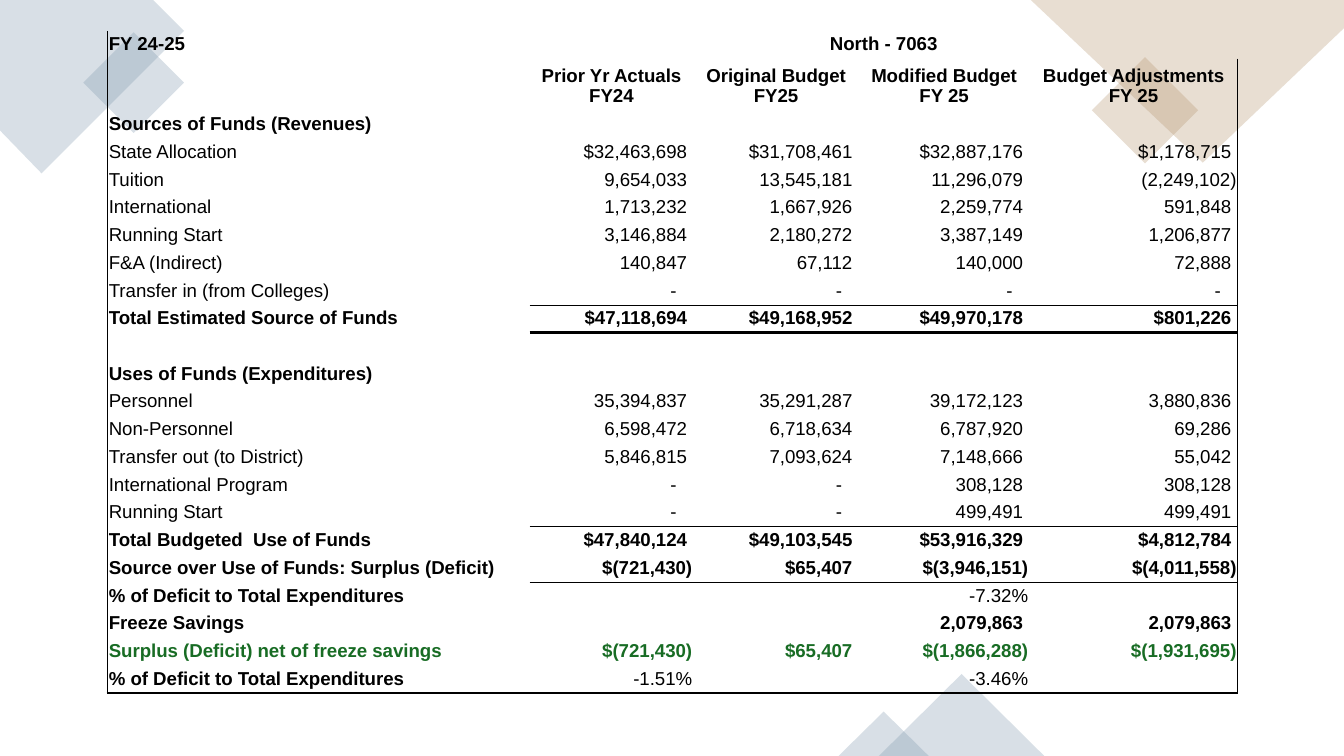
from dataclasses import dataclass

from lxml.etree import SubElement
from pptx import Presentation
from pptx.dml.color import RGBColor
from pptx.enum.shapes import MSO_SHAPE as SHAPE
from pptx.enum.text import MSO_ANCHOR as ANCHOR, PP_ALIGN as ALIGN
from pptx.oxml.ns import qn
from pptx.util import Inches, Pt

NBSP = chr(160)


@dataclass(frozen=True)
class Theme:
    """Colours and type sizes of the slide."""
    font: str = "Arial"
    size: int = 10
    ink: str = "000000"
    green: str = "186C24"
    blue: str = "7E97AD"
    tan: str = "B4936D"
    opacity: int = 30
    frame: float = 1


@dataclass(frozen=True)
class Row:
    """One budget line, with the weight of the rule under its values."""
    label: str = ""
    values: tuple = ("", "", "", "")
    bold: bool = False
    rule: float = 0
    color: str = Theme.ink


THEME = Theme()
COLUMNS = (3.14, 1.22, 1.23, 1.27, 1.55)
HEADER_HEIGHT = 0.39
NO_STYLE = "{2D5ABB26-0587-4C30-8999-92F81FD0307C}"

ROWS = (
    Row("FY 24-25", ("North - 7063", "", "", ""), bold=True),
    Row("", ("Prior Yr Actuals\nFY24", "Original Budget\nFY25",
             "Modified Budget\nFY 25", "Budget Adjustments\nFY 25"), bold=True),
    Row("Sources of Funds (Revenues)", bold=True),
    Row("State Allocation", ("$32,463,698", "$31,708,461", "$32,887,176", "$1,178,715")),
    Row("Tuition", ("9,654,033", "13,545,181", "11,296,079", "(2,249,102)")),
    Row("International", ("1,713,232", "1,667,926", "2,259,774", "591,848")),
    Row("Running Start", ("3,146,884", "2,180,272", "3,387,149", "1,206,877")),
    Row("F&A (Indirect)", ("140,847", "67,112", "140,000", "72,888")),
    Row("Transfer in (from Colleges)", ("-", "-", "-", "-"), rule=0.5),
    Row("Total Estimated Source of Funds",
        ("$47,118,694", "$49,168,952", "$49,970,178", "$801,226"), bold=True, rule=2),
    Row(),
    Row("Uses of Funds (Expenditures)", bold=True),
    Row("Personnel", ("35,394,837", "35,291,287", "39,172,123", "3,880,836")),
    Row("Non-Personnel", ("6,598,472", "6,718,634", "6,787,920", "69,286")),
    Row("Transfer out (to District)", ("5,846,815", "7,093,624", "7,148,666", "55,042")),
    Row("International Program", ("-", "-", "308,128", "308,128")),
    Row("Running Start", ("-", "-", "499,491", "499,491"), rule=0.5),
    Row(f"Total Budgeted{NBSP} Use of Funds",
        ("$47,840,124", "$49,103,545", "$53,916,329", "$4,812,784"), bold=True),
    Row("Source over Use of Funds: Surplus (Deficit)",
        ("$(721,430)", "$65,407", "$(3,946,151)", "$(4,011,558)"), bold=True, rule=1),
    Row("% of Deficit to Total Expenditures", ("", "", "-7.32%", ""), bold=True),
    Row("Freeze Savings", ("", "", "2,079,863", "2,079,863"), bold=True),
    Row("Surplus (Deficit) net of freeze savings",
        ("$(721,430)", "$65,407", "$(1,866,288)", "$(1,931,695)"),
        bold=True, color=THEME.green),
    Row("% of Deficit to Total Expenditures", ("-1.51%", "", "-3.46%", ""),
        bold=True, rule=1),
)


def tint(sp, color):
    """Give a shape a translucent fill with no line or shadow."""
    sp.shadow.inherit = False
    sp.fill.solid()
    sp.fill.fore_color.rgb = RGBColor.from_string(color)
    clr = sp.fill._xPr.find(".//" + qn("a:srgbClr"))
    SubElement(clr, qn("a:alpha"), val=str(THEME.opacity * 1000))
    sp.line.fill.background()


def add_polygon(s, x, y, points, color):
    """Draw a closed translucent outline from points relative to x, y."""
    points = [(Inches(x + dx), Inches(y + dy)) for dx, dy in points]
    builder = s.shapes.build_freeform(*points[0], scale=1.0)
    builder.add_line_segments(points[1:], close=True)
    tint(builder.convert_to_shape(), color)


def add_preset(s, kind, x, y, w, h, color, rotation=0):
    """Draw a translucent preset shape."""
    sp = s.shapes.add_shape(kind, Inches(x), Inches(y), Inches(w), Inches(h))
    sp.rotation = rotation
    tint(sp, color)


def add_corner(s, x, y, outline, diamond, color):
    """Draw a cropped large diamond and a small one overlapping it."""
    dx, dy, side = diamond
    add_polygon(s, x, y, outline, color)
    add_preset(s, SHAPE.RECTANGLE, x + dx, y + dy, side, side, color, rotation=315)


def add_peaks(s, x, bottom, color):
    """Draw two overlapping triangles that stand on the bottom edge."""
    for dx, w, h in ((0.3, 1.23, 0.61), (0, 0.67, 0.33)):
        add_preset(s, SHAPE.ISOSCELES_TRIANGLE, x + dx, bottom - h, w, h, color)


def padded(value):
    """Leave room after an amount for a closing bracket."""
    if value == "-":
        return value + NBSP * 3
    return value + NBSP if value and value[-1].isdigit() else value


def set_borders(cell, **weights):
    """Draw the cell borders L, R, T and B, and clear those without weight."""
    tc_pr = cell._tc.get_or_add_tcPr()
    for side, weight in weights.items():
        ln = SubElement(tc_pr, qn(f"a:ln{side}"), w=str(Pt(weight)))
        if weight:
            fill = SubElement(ln, qn("a:solidFill"))
            SubElement(fill, qn("a:srgbClr"), val=THEME.ink)
        else:
            SubElement(ln, qn("a:noFill"))


def set_text(cell, text, align, bold, color):
    """Write a cell at the bottom of its tight box."""
    cell.margin_left = cell.margin_right = cell.margin_top = Inches(0.01)
    cell.margin_bottom = Inches(0.03)
    cell.vertical_anchor = ANCHOR.BOTTOM
    p = cell.text_frame.paragraphs[0]
    p.text = text
    p.alignment = align
    p.font.name, p.font.size, p.font.bold = THEME.font, Pt(THEME.size), bold
    p.font.color.rgb = RGBColor.from_string(color)
    if not text:
        SubElement(p._p, qn("a:endParaRPr"), sz=str(THEME.size * 100))


def add_budget(s, x, y, w, h):
    """Draw the budget table in the given box."""
    frame = s.shapes.add_table(len(ROWS), len(COLUMNS),
                               Inches(x), Inches(y), Inches(w), Inches(h))
    table = frame.table
    table.first_row = table.horz_banding = False
    table._tbl.tblPr.find(qn("a:tableStyleId")).text = NO_STYLE
    for column, width in zip(table.columns, COLUMNS):
        column.width = Inches(width)
    line_height = (h - HEADER_HEIGHT) / (len(ROWS) - 1)
    last_row, last_col = len(ROWS) - 1, len(COLUMNS) - 1
    for i, row in enumerate(ROWS):
        table.rows[i].height = Inches(HEADER_HEIGHT if i == 1 else line_height)
        above = ROWS[i - 1].rule if i else 0
        for j, value in enumerate((row.label, *row.values)):
            cell = table.cell(i, j)
            heading = i < 2
            text = padded(value) if j and not heading else value
            align = ALIGN.LEFT if j == 0 else ALIGN.CENTER if heading else ALIGN.RIGHT
            set_text(cell, text, align, row.bold and not value.endswith("%"), row.color)
            set_borders(cell,
                        L=THEME.frame if j == 0 else 0,
                        R=THEME.frame if j == last_col and i else 0,
                        T=above if j else 0,
                        B=row.rule if j or i == last_row else 0)
            cell.fill.background()
    table.cell(0, 1).merge(table.cell(0, 4))
    table.cell(2, 0).merge(table.cell(2, 3))


def main():
    """Build and save the slide."""
    prs = Presentation()
    prs.slide_width = Inches(10)
    prs.slide_height = prs.slide_width * 9 // 16
    s = prs.slides.add_slide(prs.slide_layouts[6])
    add_corner(s, 0, 0, ((1.14, 0), (0, 0), (0, 0.97), (0.31, 1.29), (1.37, 0.23)),
               (0.73, 0.35, 0.53), THEME.blue)
    add_corner(s, 7.67, 0, ((2.33, 0), (0, 0), (1.28, 1.21), (2.33, 0.21)),
               (0.57, 0.54, 0.56), THEME.tan)
    add_peaks(s, 6.24, prs.slide_height.inches if hasattr(prs.slide_height, "inches")
              else prs.slide_height / Inches(1), THEME.blue)
    add_budget(s, 0.8, 0.23, 8.41, 4.93)
    prs.save("out.pptx")


if __name__ == "__main__":
    main()
